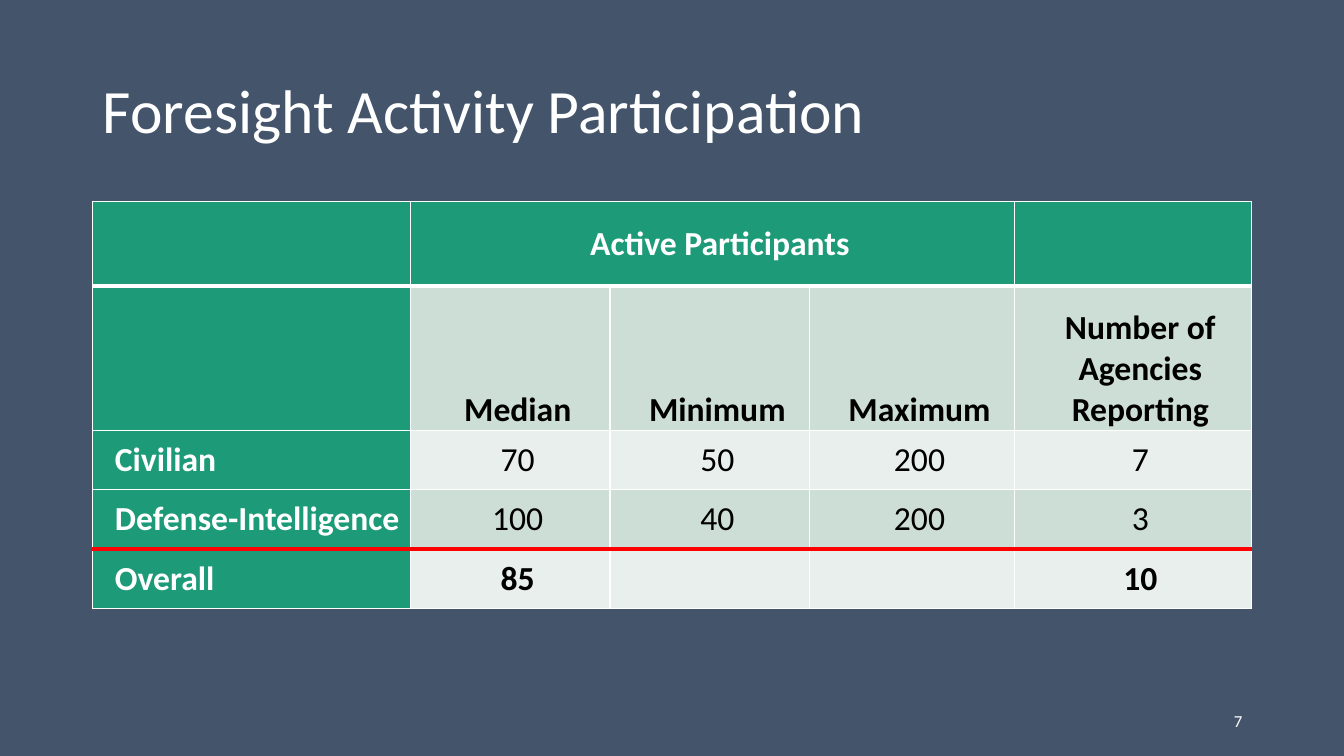
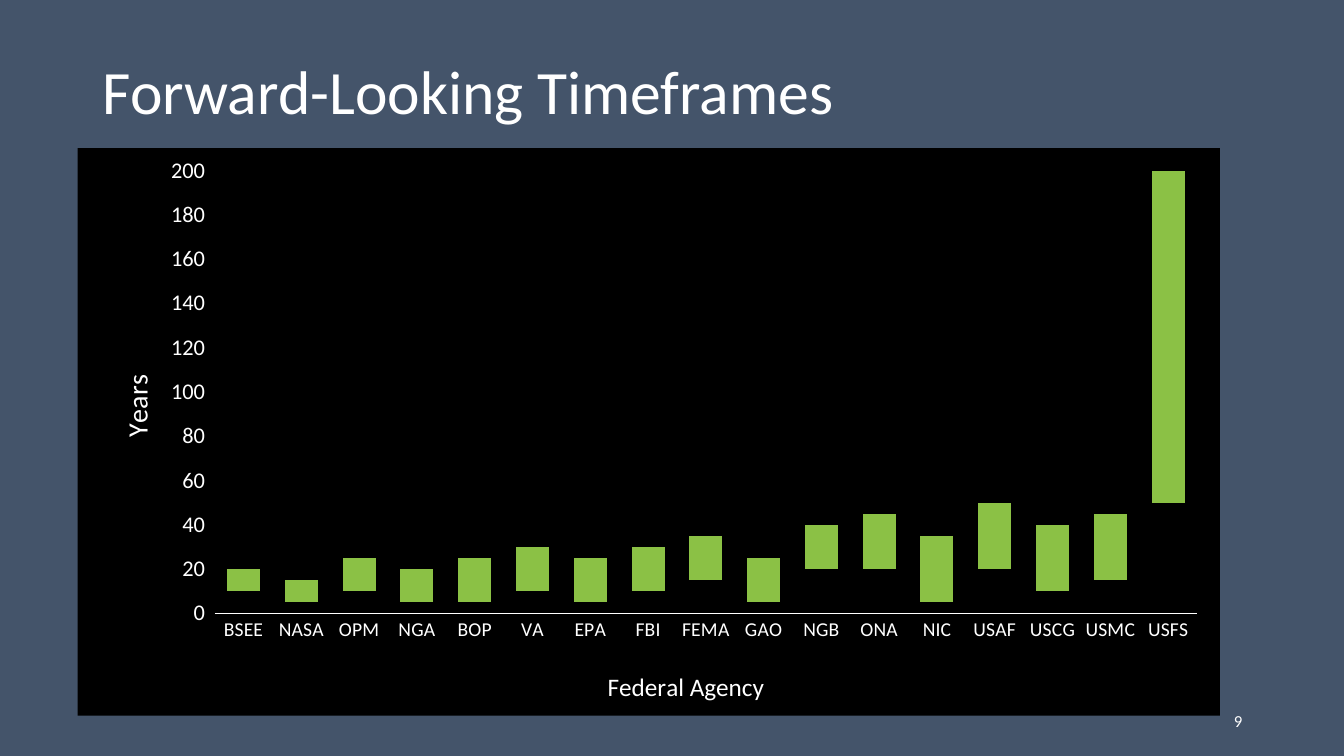
from lxml import etree
from pptx import Presentation
from pptx.chart.data import CategoryChartData
from pptx.dml.color import RGBColor
from pptx.enum.chart import XL_CHART_TYPE, XL_TICK_MARK
from pptx.enum.text import MSO_ANCHOR, MSO_AUTO_SIZE, PP_ALIGN
from pptx.oxml import parse_xml
from pptx.oxml.ns import nsdecls, qn
from pptx.util import Inches, Pt

COLUMN_STACKED = XL_CHART_TYPE.COLUMN_STACKED
TICK_NONE, TICK_OUT = XL_TICK_MARK.NONE, XL_TICK_MARK.OUTSIDE
MIDDLE, BOTTOM = MSO_ANCHOR.MIDDLE, MSO_ANCHOR.BOTTOM
LEFT, CENTER, RIGHT = PP_ALIGN.LEFT, PP_ALIGN.CENTER, PP_ALIGN.RIGHT
NO_AUTOSIZE = MSO_AUTO_SIZE.NONE

FONT = "Calibri"
SLATE, WHITE, BLACK, RED = "44546A", "FFFFFF", "000000", "FF0000"
TEAL, BAND_DARK, BAND_LIGHT, LIME = "1D9A78", "CDDED6", "E8EFEC", "8BC145"
SLIDE_W, SLIDE_H = 13.33, 7.5
MARGIN, CONTENT_W, TITLE_TOP = 0.92, 11.5, 0.4
TITLE_ONLY = 5


def rgb(color):
    return RGBColor.from_string(color)


def fill(target, color):
    target.fill.solid()
    target.fill.fore_color.rgb = rgb(color)


def style_font(font, size, color=WHITE, bold=False):
    font.name, font.size, font.bold = FONT, Pt(size), bold
    font.color.rgb = rgb(color)


def add_run(p, text, size, color=WHITE, bold=False):
    r = p.add_run()
    r.text = text
    style_font(r.font, size, color, bold)


def place(sp, box):
    sp.left, sp.top, sp.width, sp.height = map(Inches, box)


def add_base_slide(prs, title, number, title_h):
    """Add a slide with its title and its page number."""
    s = prs.slides.add_slide(prs.slide_layouts[TITLE_ONLY])
    sp = s.shapes.title
    place(sp, (MARGIN, TITLE_TOP, CONTENT_W, title_h))
    tf = sp.text_frame
    tf.vertical_anchor, tf.auto_size = MIDDLE, NO_AUTOSIZE
    p = tf.paragraphs[0]
    p.alignment, p.line_spacing = LEFT, 0.9
    add_run(p, title, 44)

    number_w = 3
    tf = s.shapes.add_textbox(Inches(MARGIN + CONTENT_W - number_w), Inches(6.95),
                              Inches(number_w), Inches(0.4)).text_frame
    tf.word_wrap, tf.vertical_anchor = True, MIDDLE
    p = tf.paragraphs[0]
    p.alignment = RIGHT
    add_run(p, str(number), 12)
    return s


def set_borders(cell, top, bottom):
    """Draw white sides, and a top and bottom given as (colour, points)."""
    thin = (WHITE, 1)
    tcPr = cell._tc.get_or_add_tcPr()
    sides = (("lnL", thin), ("lnR", thin), ("lnT", top), ("lnB", bottom))
    for i, (tag, (color, width)) in enumerate(sides):
        tcPr.insert(i, parse_xml(
            f'<a:{tag} {nsdecls("a")} w="{Pt(width)}"><a:solidFill>'
            f'<a:srgbClr val="{color}"/></a:solidFill></a:{tag}>'))


def fill_cell(cell, text, color, align, bold, anchor):
    cell.vertical_anchor = anchor
    cell.margin_left = cell.margin_right = Inches(0.07)
    cell.margin_top = cell.margin_bottom = 0
    if not text:
        return
    lines = text.split("\n")
    for i, line in enumerate(lines):
        p = cell.text_frame.paragraphs[0] if i == 0 else cell.text_frame.add_paragraph()
        p.alignment = align
        p.space_after = Pt(6 if len(lines) == 1 else 0)
        pPr = p._p.get_or_add_pPr()
        pPr.set("marL", "0")
        pPr.set("indent", str(Inches(0.15)))
        add_run(p, line, 24, color, bold)


def add_participation_table(s, box):
    rows = [
        ["", "Active Participants", "", "", ""],
        ["", "Median", "Minimum", "Maximum", "Number of\nAgencies\nReporting"],
        ["Civilian", "70", "50", "200", "7"],
        ["Defense-Intelligence", "100", "40", "200", "3"],
        ["Overall", "85", "", "", "10"],
    ]
    col_widths = [3.15, 1.98, 1.98, 2.03, 2.35]
    row_heights = [0.84, 1.43, 0.59, 0.59, 0.59]
    rules = [(WHITE, 1), (WHITE, 3), (WHITE, 1), (WHITE, 1), (RED, 3), (WHITE, 1)]
    last = len(rows) - 1

    table = s.shapes.add_table(len(rows), len(col_widths), *map(Inches, box)).table
    for col, width in zip(table.columns, col_widths):
        col.width = Inches(width)
    for row, height in zip(table.rows, row_heights):
        row.height = Inches(height)
    table.cell(0, 1).merge(table.cell(0, 3))

    for i, row in enumerate(rows):
        for j, text in enumerate(row):
            cell = table.cell(i, j)
            header = i == 0 or j == 0
            band = BAND_DARK if i % 2 else BAND_LIGHT
            fill(cell, TEAL if header else band)
            set_borders(cell, rules[i], rules[i + 1])
            fill_cell(cell, text, WHITE if header else BLACK,
                      CENTER if j else LEFT,
                      header or i in (1, last),
                      BOTTOM if i == 1 else MIDDLE)


def set_layout(parent, index, **shares):
    """Place a chart part by shares of the chart's size."""
    for old in parent.findall(qn("c:layout")):
        parent.remove(old)
    layout = etree.Element(qn("c:layout"))
    manual = etree.SubElement(layout, qn("c:manualLayout"))
    if "w" in shares:
        etree.SubElement(manual, qn("c:layoutTarget")).set("val", "inner")
    for key in ("x", "y"):
        etree.SubElement(manual, qn(f"c:{key}Mode")).set("val", "edge")
    for key, share in shares.items():
        etree.SubElement(manual, qn(f"c:{key}")).set("val", str(share))
    parent.insert(index, layout)


def style_axis(axis, title, title_size, label_size, tick, x, y):
    axis.has_major_gridlines = False
    axis.major_tick_mark, axis.minor_tick_mark = tick, TICK_NONE
    style_font(axis.tick_labels.font, label_size)
    add_run(axis.axis_title.text_frame.paragraphs[0], title, title_size)
    set_layout(axis.axis_title._element, 1, x=x, y=y)


def add_timeframe_chart(s, box):
    """Add floating columns that run from the nearest to the farthest year."""
    ranges = {
        "BSEE": (10, 10), "NASA": (5, 10), "OPM": (10, 15), "NGA": (5, 15),
        "BOP": (5, 20), "VA": (10, 20), "EPA": (5, 20), "FBI": (10, 20),
        "FEMA": (15, 20), "GAO": (5, 20), "NGB": (20, 20), "ONA": (20, 25),
        "NIC": (5, 30), "USAF": (20, 30), "USCG": (10, 30), "USMC": (15, 30),
        "USFS": (50, 150),
    }
    data = CategoryChartData()
    data.categories = list(ranges)
    for i, values in enumerate(zip(*ranges.values()), 1):
        data.add_series(f"Series {i}", values)
    chart = s.shapes.add_chart(COLUMN_STACKED, *map(Inches, box), data).chart
    chart.has_legend = chart.has_title = False
    style_font(chart.font, 10)

    plot = chart.plots[0]
    plot.gap_width, plot.overlap, plot.vary_by_categories = 75, 100, False
    for series, color in zip(plot.series, (BLACK, LIME)):
        fill(series.format, color)

    cat, val = chart.category_axis, chart.value_axis
    style_axis(cat, "Federal Agency", 18, 14, TICK_NONE, 0.46, 0.91)
    cat.format.line.color.rgb = rgb(WHITE)
    cat.format.line.width = Pt(0.75)
    style_axis(val, "Years", 20, 16, TICK_OUT, 0.03, 0.39)
    val.format.line.fill.background()
    val.minimum_scale, val.maximum_scale, val.major_unit = 0, 200, 20

    chart_part = chart._chartSpace.find(qn("c:chart"))
    set_layout(chart_part.find(qn("c:plotArea")), 0, x=0.12, y=0.04, w=0.86, h=0.78)
    chart_part.addnext(parse_xml(
        f'<c:spPr {nsdecls("c", "a")}><a:solidFill><a:srgbClr val="{BLACK}"/>'
        '</a:solidFill><a:ln><a:noFill/></a:ln></c:spPr>'))


def main():
    prs = Presentation()
    prs.slide_width, prs.slide_height = Inches(SLIDE_W), Inches(SLIDE_H)
    fill(prs.slide_master.background, SLATE)

    s = add_base_slide(prs, "Foresight Activity Participation", 7, 1.45)
    add_participation_table(s, (MARGIN, 2, CONTENT_W, 4.03))

    s = add_base_slide(prs, "Forward-Looking Timeframes", 9, 1.07)
    add_timeframe_chart(s, (0.77, 1.47, 11.33, 5.63))
    prs.save("out.pptx")


if __name__ == "__main__":
    main()
